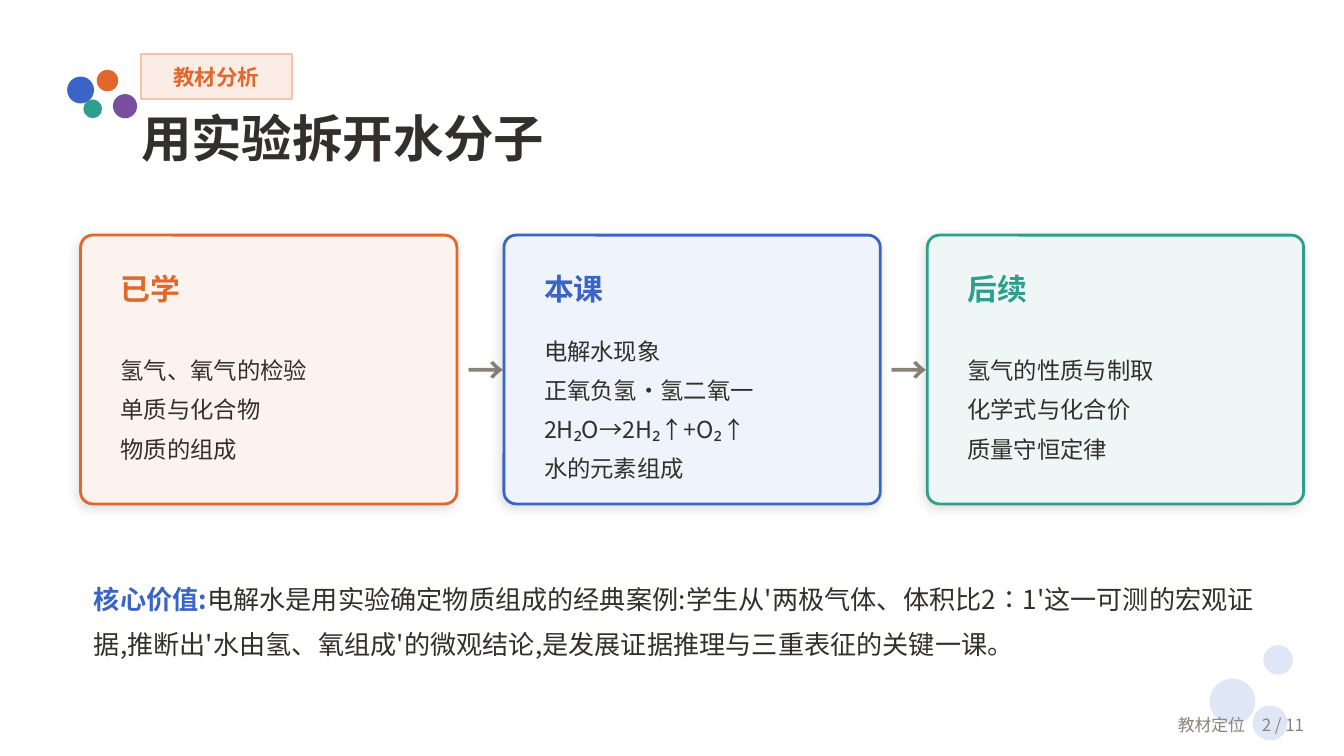
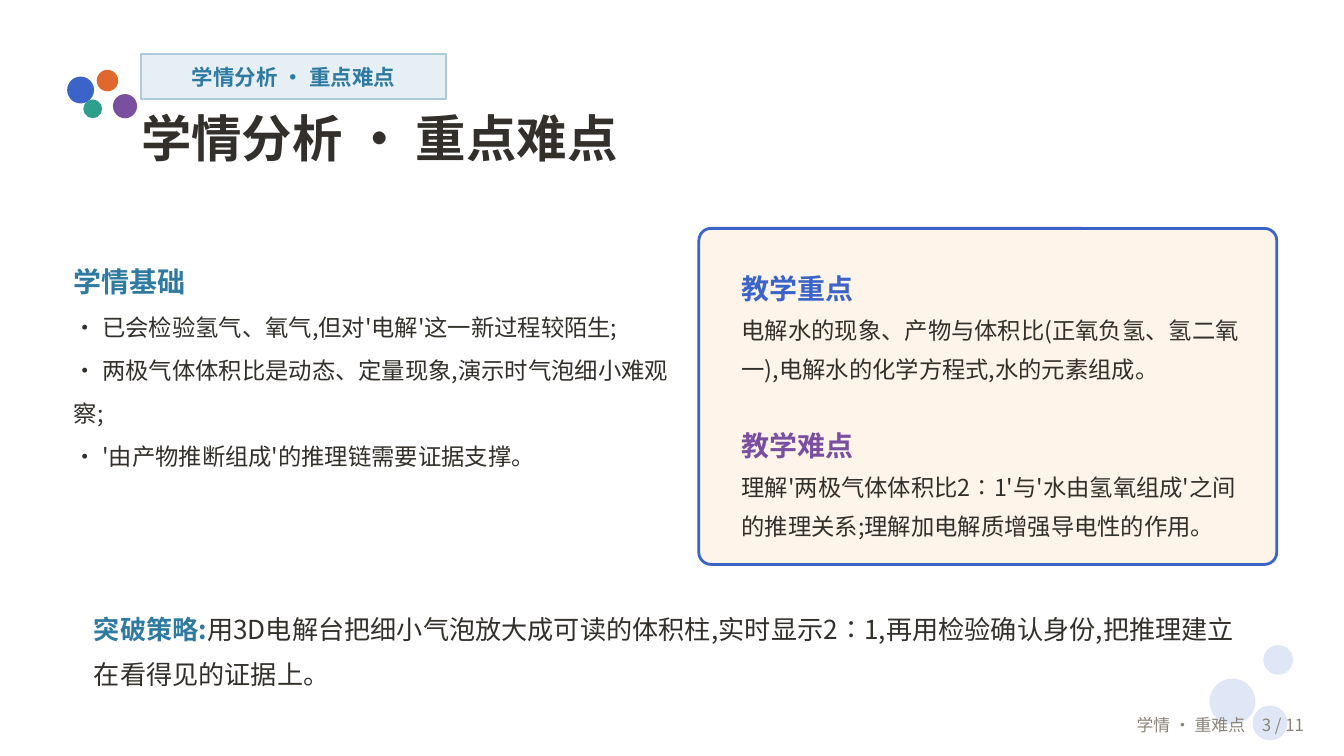
from dataclasses import dataclass

from lxml import etree
from pptx import Presentation
from pptx import util as u
from pptx.dml.color import RGBColor
from pptx.enum import shapes, text
from pptx.oxml.ns import qn

# Shared style
FONT = "Noto Sans CJK SC"
INK, GREY, PALE = "33302B", "8A8478", "DFE6F6"
BLUE, ORANGE, GREEN, PURPLE, TEAL = "3A64C8", "E0682C", "2F9E8D", "7B4FA0", "2F7AA0"
PAGE_TOTAL = 11
CARD_TOP, CARD_WIDTH, CARD_HEIGHT = 1.75, 2.8, 2
CARD_LEFT, CARD_STEP = 0.6, 3.15

Area = tuple[float, float, float, float]


@dataclass
class Span:
    words: str
    size: float
    color: str = INK
    bold: bool = False


@dataclass
class Para:
    spans: list[Span]
    leading: float | None = None
    align: text.PP_ALIGN = text.PP_ALIGN.LEFT
    before: float = 0


@dataclass
class Dot:
    left: float
    top: float
    size: float
    color: str


@dataclass
class Header:
    tag: str
    tag_width: float
    color: str
    fill: str
    edge: str
    title: str


@dataclass
class Card:
    heading: str
    lines: list[str]
    color: str
    fill: str


DOTS = [
    Dot(9, 5.05, 0.34, PALE),
    Dot(9.4, 4.8, 0.22, PALE),
    Dot(9.32, 5.25, 0.26, PALE),
    Dot(0.5, 0.57, 0.2, BLUE),
    Dot(0.72, 0.52, 0.16, ORANGE),
    Dot(0.62, 0.74, 0.14, GREEN),
    Dot(0.84, 0.7, 0.18, PURPLE),
]

CARDS = [
    Card("已学", ["氢气、氧气的检验", "单质与化合物", "物质的组成"], ORANGE, "FDF3EE"),
    Card("本课", ["电解水现象", "正氧负氢·氢二氧一", "2H₂O→2H₂↑+O₂↑", "水的元素组成"],
         BLUE, "EFF3FB"),
    Card("后续", ["氢气的性质与制取", "化学式与化合价", "质量守恒定律"], GREEN, "EEF7F6"),
]


def rgb(value: str) -> RGBColor:
    return RGBColor.from_string(value)


def lengths(area: Area) -> list[u.Length]:
    return [u.Inches(value) for value in area]


def fill_text(shape, paras: list[Para], middle: bool = True, inset: bool = True) -> None:
    frame = shape.text_frame
    frame.word_wrap = True
    frame.vertical_anchor = text.MSO_ANCHOR.MIDDLE if middle else text.MSO_ANCHOR.TOP
    if not inset:
        frame.margin_left = frame.margin_right = 0
        frame.margin_top = frame.margin_bottom = 0
    for index, para in enumerate(paras):
        line = frame.add_paragraph() if index else frame.paragraphs[0]
        line.alignment = para.align
        if para.leading:
            line.line_spacing = u.Pt(para.leading)
        if para.before:
            line.space_before = u.Pt(para.before)
        for span in para.spans:
            run = line.add_run()
            run.text = span.words
            run.font.name = FONT
            run.font.size = u.Pt(span.size)
            run.font.bold = span.bold
            run.font.color.rgb = rgb(span.color)
            # East Asian characters take their own typeface element
            latin = run.font._element.find(qn("a:latin"))
            east = etree.Element(qn("a:ea"), typeface=FONT)
            latin.addnext(east)


def add_text(page, area: Area, paras: list[Para], middle: bool = True,
             inset: bool = True) -> None:
    fill_text(page.shapes.add_textbox(*lengths(area)), paras, middle, inset)


def add_shape(page, kind: shapes.MSO_SHAPE, area: Area, fill: str,
              edge: str | None = None, width: float = 1.5):
    shape = page.shapes.add_shape(kind, *lengths(area))
    shape.shadow.inherit = False
    shape.fill.solid()
    shape.fill.fore_color.rgb = rgb(fill)
    if edge:
        shape.line.color.rgb = rgb(edge)
        shape.line.width = u.Pt(width)
    else:
        shape.line.fill.background()
    return shape


def add_panel(page, area: Area, fill: str, edge: str, corner: float):
    panel = add_shape(page, shapes.MSO_SHAPE.ROUNDED_RECTANGLE, area, fill, edge)
    panel.adjustments[0] = corner
    return panel


def add_soft_shadow(shape) -> None:
    effects = shape._element.spPr.find(qn("a:effectLst"))
    shadow = etree.SubElement(effects, qn("a:outerShdw"), blurRad=str(u.Pt(6)),
                              dist=str(u.Pt(2)), dir=str(135 * 60000),
                              algn="bl", rotWithShape="0")
    color = etree.SubElement(shadow, qn("a:srgbClr"), val="000000")
    etree.SubElement(color, qn("a:alpha"), val="12000")


def start_page(deck, header: Header):
    page = deck.slides.add_slide(deck.slide_layouts[6])
    for dot in DOTS:
        add_shape(page, shapes.MSO_SHAPE.OVAL, (dot.left, dot.top, dot.size, dot.size), dot.color)
    tag = add_shape(page, shapes.MSO_SHAPE.RECTANGLE, (1.05, 0.4, header.tag_width, 0.34),
                    header.fill, header.edge, 1)
    fill_text(tag, [Para([Span(header.tag, 11.5, header.color, True)],
                         align=text.PP_ALIGN.CENTER)], inset=False)
    add_text(page, (1.05, 0.8, 8.4, 0.55), [Para([Span(header.title, 27, INK, True)])],
             middle=False, inset=False)
    return page


def add_summary(page, top: float, height: float, label: str, color: str, words: str) -> None:
    add_text(page, (0.6, top, 8.85, height),
             [Para([Span(label, 14, color, True), Span(words, 14)], 24)])


def add_footer(page, section: str, number: int) -> None:
    words = f"{section}　{number} / {PAGE_TOTAL}"
    add_text(page, (8, 5.24, 1.8, 0.3),
             [Para([Span(words, 9, GREY)], align=text.PP_ALIGN.RIGHT)])


def add_card(page, left: float, card: Card) -> None:
    panel = add_panel(page, (left, CARD_TOP, CARD_WIDTH, CARD_HEIGHT),
                      card.fill, card.color, 0.045)
    add_soft_shadow(panel)
    inner, width = left + 0.2, CARD_WIDTH - 0.4
    add_text(page, (inner, 1.95, width, 0.4), [Para([Span(card.heading, 16, card.color, True)])])
    add_text(page, (inner, 2.38, width, 1.25),
             [Para([Span(line, 12.5)], 21) for line in card.lines])


def build_textbook_page(deck) -> None:
    page = start_page(deck, Header("教材分析", 1.12, ORANGE, "FBEDE6", "F3C3AB",
                                   "用实验拆开水分子"))
    # Learning path: three cards with arrows in the gaps
    for index, card in enumerate(CARDS):
        left = CARD_LEFT + index * CARD_STEP
        add_card(page, left, card)
        if index < len(CARDS) - 1:
            add_text(page, (left + CARD_WIDTH - 0.02, 2.55, 0.4, 0.4),
                     [Para([Span("→", 20, GREY, True)])])
    add_summary(page, 4.15, 0.85, "核心价值:", BLUE,
                "电解水是用实验确定物质组成的经典案例:学生从'两极气体、体积比2∶1'"
                "这一可测的宏观证据,推断出'水由氢、氧组成'的微观结论,"
                "是发展证据推理与三重表征的关键一课。")
    add_footer(page, "教材定位", 2)


def build_learner_page(deck) -> None:
    topic = "学情分析 · 重点难点"
    page = start_page(deck, Header(topic, 2.27, TEAL, "E6EFF4", "ACCAD9", topic))
    # What learners already know
    basics = [
        "· 已会检验氢气、氧气,但对'电解'这一新过程较陌生;",
        "· 两极气体体积比是动态、定量现象,演示时气泡细小难观察;",
        "· '由产物推断组成'的推理链需要证据支撑。",
    ]
    add_text(page, (0.55, 1.9, 4.5, 1.8),
             [Para([Span("学情基础", 15, TEAL, True)], 23)]
             + [Para([Span(line, 12.5)], 23) for line in basics],
             middle=False, inset=False)
    # Key points and difficulties
    add_panel(page, (5.2, 1.7, 4.3, 2.5), "FFF4EA", BLUE, 0.036)
    add_text(page, (5.42, 1.9, 3.92, 2.2), [
        Para([Span("教学重点", 15, BLUE, True)], 21),
        Para([Span("电解水的现象、产物与体积比(正氧负氢、氢二氧一),"
                   "电解水的化学方程式,水的元素组成。", 12.5)], 21),
        Para([Span("教学难点", 15, PURPLE, True)], 21, before=21),
        Para([Span("理解'两极气体体积比2∶1'与'水由氢氧组成'之间的推理关系;"
                   "理解加电解质增强导电性的作用。", 12.5)], 21),
    ])
    add_summary(page, 4.45, 0.7, "突破策略:", TEAL,
                "用3D电解台把细小气泡放大成可读的体积柱,实时显示2∶1,"
                "再用检验确认身份,把推理建立在看得见的证据上。")
    add_footer(page, "学情 · 重难点", 3)


def main() -> None:
    deck = Presentation()
    # Widescreen page, 16 by 9
    deck.slide_width = u.Inches(10)
    deck.slide_height = u.Inches(10 * 9 / 16)
    build_textbook_page(deck)
    build_learner_page(deck)
    deck.save("out.pptx")


if __name__ == "__main__":
    main()
